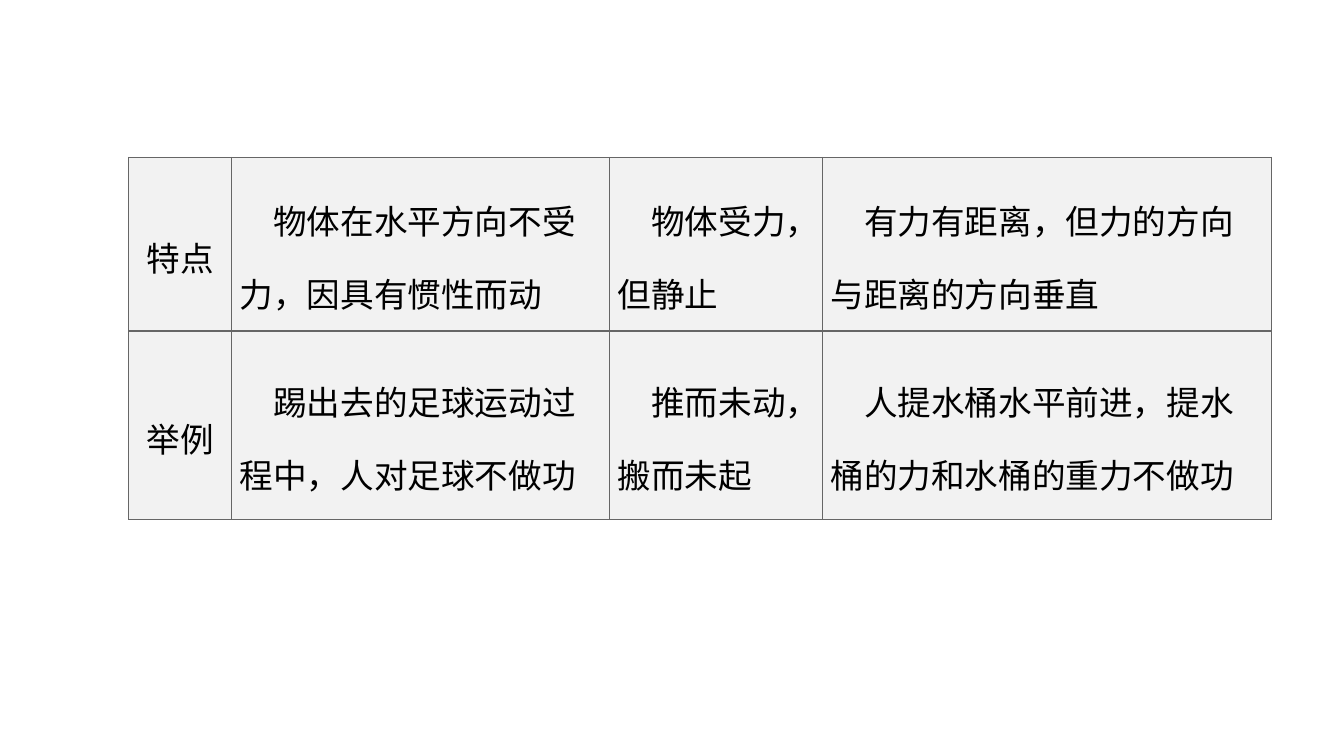
from lxml.etree import SubElement
from pptx import Presentation
from pptx.dml.color import RGBColor
from pptx.enum.text import MSO_VERTICAL_ANCHOR as Anchor, PP_PARAGRAPH_ALIGNMENT as Align
from pptx.oxml.ns import qn
from pptx.util import Pt

COLORS = {"text": "000000", "cell": "F2F2F2", "border": "666666"}
FONT = "Noto Sans CJK SC"
FONT_SIZE = 24
CELL_FORMAT = {
    "vertical_anchor": Anchor.MIDDLE,
    "margin_left": Pt(5.76),
    "margin_right": Pt(5.76),
    "margin_top": Pt(2.88),
    "margin_bottom": Pt(2.88),
}
FONT_FORMAT = {"name": FONT, "size": Pt(FONT_SIZE), "bold": False}
COLUMN_WIDTHS = [73.5, 270, 152, 320.5]
ROW_HEIGHTS = [124, 134.5]
ROWS = [
    ["特点", "物体在水平方向不受力，因具有惯性而动", "物体受力，但静止",
     "有力有距离，但力的方向与距离的方向垂直"],
    ["举例", "踢出去的足球运动过程中，人对足球不做功", "推而未动，搬而未起",
     "人提水桶水平前进，提水桶的力和水桶的重力不做功"],
]


def set_attributes(target, values):
    for name, value in values.items():
        setattr(target, name, value)


def add_borders(cell):
    """Put a thin line on all four sides; call before the cell is filled."""
    properties = cell._tc.get_or_add_tcPr()
    for side in ("lnL", "lnR", "lnT", "lnB"):
        line = SubElement(properties, qn(f"a:{side}"), w=str(Pt(1)))
        fill = SubElement(line, qn("a:solidFill"))
        SubElement(fill, qn("a:srgbClr"), val=COLORS["border"])


def fill_cell(cell, text, is_heading):
    """Headings are centred; other cells start with a one-character indent."""
    add_borders(cell)
    cell.fill.solid()
    cell.fill.fore_color.rgb = RGBColor.from_string(COLORS["cell"])
    set_attributes(cell, CELL_FORMAT)
    paragraph = cell.text_frame.paragraphs[0]
    paragraph.line_spacing = 1.5
    paragraph.alignment = Align.CENTER if is_heading else Align.LEFT
    if not is_heading:
        paragraph._p.get_or_add_pPr().set("indent", str(Pt(FONT_SIZE)))
    run = paragraph.add_run()
    run.text = text
    set_attributes(run.font, FONT_FORMAT)
    run.font.color.rgb = RGBColor.from_string(COLORS["text"])
    SubElement(run._r.get_or_add_rPr(), qn("a:ea"), typeface=FONT)


def add_comparison_table(slide, left, top):
    frame = slide.shapes.add_table(
        len(ROWS), len(COLUMN_WIDTHS), Pt(left), Pt(top),
        Pt(sum(COLUMN_WIDTHS)), Pt(sum(ROW_HEIGHTS)))
    table = frame.table
    set_attributes(table, {"first_row": False, "horz_banding": False})
    for column, width in zip(table.columns, COLUMN_WIDTHS):
        column.width = Pt(width)
    for row, height, texts in zip(table.rows, ROW_HEIGHTS, ROWS):
        row.height = Pt(height)
        for index, (cell, text) in enumerate(zip(row.cells, texts)):
            fill_cell(cell, text, is_heading=index == 0)


def main():
    presentation = Presentation()
    set_attributes(presentation, {"slide_width": Pt(960), "slide_height": Pt(540)})
    slide = presentation.slides.add_slide(presentation.slide_layouts[6])
    add_comparison_table(slide, 92, 112.5)
    presentation.save("out.pptx")


if __name__ == "__main__":
    main()
